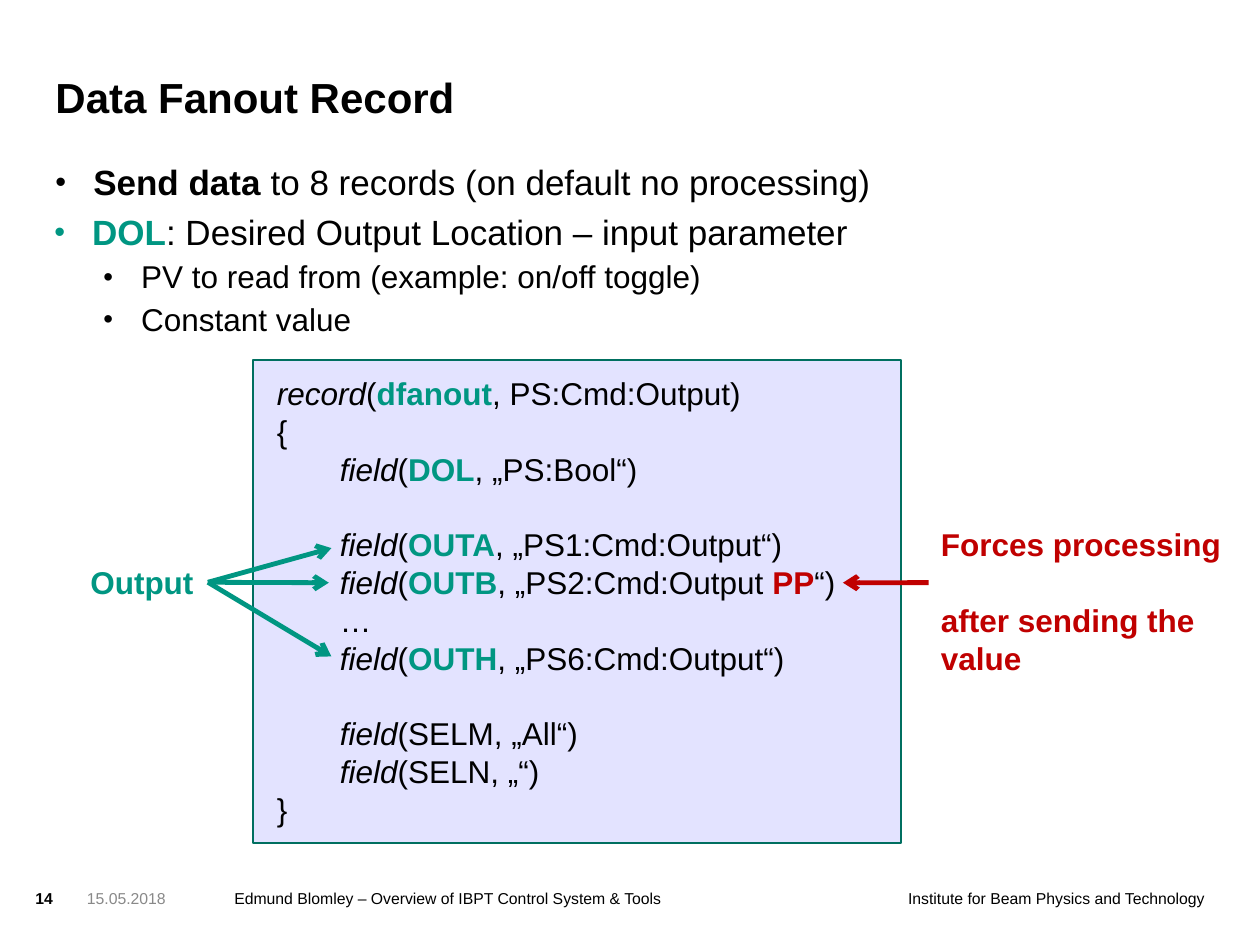
from lxml.etree import SubElement
from pptx import Presentation
from pptx.dml.color import RGBColor
from pptx.enum.shapes import MSO_CONNECTOR, MSO_SHAPE
from pptx.enum.text import MSO_ANCHOR, MSO_AUTO_SIZE, PP_ALIGN
from pptx.oxml.ns import qn
from pptx.util import Pt

BLACK, GREY, TEAL, RED = "000000", "898989", "009682", "C00000"
STYLES = {
    "plain": (BLACK, False, False),
    "bold": (BLACK, True, False),
    "italic": (BLACK, False, True),
    "key": (TEAL, True, False),
    "alert": (RED, True, False),
    "muted": (GREY, False, False),
}
LINE_HEIGHT = 21.6

TITLE = "Data Fanout Record"
SEND_BULLETS = [
    (0, [("Send data ", "bold"), ("to 8 records (on default no processing)", "plain")]),
]
DOL_BULLETS = [
    (0, [("DOL", "key"), (": Desired Output Location – input parameter", "plain")]),
    (1, [("PV to read from (example: on/off toggle)", "plain")]),
    (1, [("Constant value", "plain")]),
]
BULLET_LEVELS = [(21.6, 20), (49.7, 18)]


def field(name, style, *value):
    return [("field", "italic"), ("(", "plain"), (name, style), *value]


CODE = [
    (0, 0, [("record", "italic"), ("(", "plain"), ("dfanout", "key"),
            (", PS:Cmd:Output)", "plain")]),
    (0, 0, [("{", "plain")]),
    (1, 0, field("DOL", "key", (", „PS:Bool“)", "plain"))),
    (1, 1, field("OUTA", "key", (", „PS1:Cmd:Output“)", "plain"))),
    (1, 0, field("OUTB", "key", (", „PS2:Cmd:Output ", "plain"),
                 ("PP", "alert"), ("“)", "plain"))),
    (1, 0, [("…", "plain")]),
    (1, 0, field("OUTH", "key", (", „PS6:Cmd:Output“)", "plain"))),
    (1, 1, field("SELM", "plain", (", „All“)", "plain"))),
    (1, 0, field("SELN", "plain", (", „“)", "plain"))),
    (0, 0, [("}", "plain")]),
]
FORCES_NOTE = [
    (0, 0, [("Forces processing", "alert")]),
    (0, 1, [("after sending the value", "alert")]),
]
OUTPUT_LABEL = [(0, 0, [("Output", "key")])]
FOOTER = [
    ("14", "bold", 20.2, 26, PP_ALIGN.LEFT),
    ("15.05.2018", "muted", 49.7, 80.6, PP_ALIGN.LEFT),
    ("Edmund Blomley – Overview of IBPT Control System & Tools", "plain",
     133.9, 359.3, PP_ALIGN.LEFT),
    ("Institute for Beam Physics and Technology", "plain", 472.3, 216, PP_ALIGN.RIGHT),
]
OUTPUT_TARGETS = [(189.4, 313.2), (187.9, 333), (189.4, 375.1)]
PP_TARGET = (481.7, 333)


def rgb(value):
    return RGBColor.from_string(value)


def add_runs(paragraph, runs, size):
    for text, style in runs:
        run = paragraph.add_run()
        run.text = text
        color, run.font.bold, run.font.italic = STYLES[style]
        run.font.name = "Arial"
        run.font.size = Pt(size)
        run.font.color.rgb = rgb(color)


def clear_insets(frame):
    frame.margin_left = frame.margin_right = Pt(0)
    frame.margin_top = frame.margin_bottom = Pt(0)


def add_box(slide, left, top, width, height, insets=False, wrap=True):
    box = slide.shapes.add_textbox(Pt(left), Pt(top), Pt(width), Pt(height))
    box.text_frame.word_wrap = wrap
    if not insets:
        clear_insets(box.text_frame)
    return box


def paragraphs(frame, items):
    for index, item in enumerate(items):
        yield index, frame.add_paragraph() if index else frame.paragraphs[0], item


def write_bullets(frame, bullets):
    for index, paragraph, (level, runs) in paragraphs(frame, bullets):
        indent, size = BULLET_LEVELS[level]
        paragraph.level = level
        properties = paragraph._p.get_or_add_pPr()
        properties.set("marL", str(Pt(indent)))
        properties.set("indent", str(-Pt(21.6)))
        SubElement(properties, qn("a:buSzPct")).set("val", "88000")
        SubElement(properties, qn("a:buFont")).set("typeface", "Arial")
        SubElement(properties, qn("a:buChar")).set("char", "•")
        paragraph.line_spacing = 0.9
        if index:
            paragraph.space_before = Pt(4.8)
        add_runs(paragraph, runs, size)


def write_lines(frame, lines):
    for index, paragraph, (indent, gap, runs) in paragraphs(frame, lines):
        if indent:
            paragraph._p.get_or_add_pPr().set("marL", str(Pt(36 * indent)))
        if index:
            paragraph.space_before = Pt(LINE_HEIGHT * gap)
        add_runs(paragraph, runs, 18)


def add_arrow(slide, label, site, target, color):
    x, y = Pt(target[0]), Pt(target[1])
    arrow = slide.shapes.add_connector(MSO_CONNECTOR.STRAIGHT, x, y, x, y)
    arrow.begin_connect(label, site)
    arrow.line.color.rgb = rgb(color)
    arrow.line.width = Pt(2.75)
    SubElement(arrow.line._get_or_add_ln(), qn("a:tailEnd")).set("type", "arrow")
    SubElement(arrow._element.spPr, qn("a:effectLst"))


def main():
    deck = Presentation()
    deck.slide_width, deck.slide_height = Pt(720), Pt(540)
    slide = deck.slides.add_slide(deck.slide_layouts[5])

    title = slide.shapes.title
    title.left, title.top, title.width, title.height = Pt(31.7), Pt(31), Pt(540.7), Pt(38.9)
    title.text_frame.auto_size = MSO_AUTO_SIZE.NONE
    title.text_frame.vertical_anchor = MSO_ANCHOR.BOTTOM
    clear_insets(title.text_frame)
    heading = title.text_frame.paragraphs[0]
    heading.alignment = PP_ALIGN.LEFT
    heading.line_spacing = 0.9
    add_runs(heading, [(TITLE, "bold")], 24)

    write_bullets(add_box(slide, 31.7, 94.3, 656.6, 24).text_frame, SEND_BULLETS)
    write_bullets(add_box(slide, 31, 123.1, 656.6, 74.9).text_frame, DOL_BULLETS)

    panel = slide.shapes.add_shape(
        MSO_SHAPE.RECTANGLE, Pt(144.7), Pt(205.9), Pt(370.1), Pt(275.8))
    panel.shadow.inherit = False
    panel.fill.solid()
    panel.fill.fore_color.rgb = rgb("9999FF")
    fill_color = panel._element.spPr.find(qn("a:solidFill"))[0]
    SubElement(fill_color, qn("a:alpha")).set("val", "27000")
    panel.line.color.rgb = rgb("006F60")
    panel.line.width = Pt(1)

    code = add_box(slide, 151.2, 210.2, 364.3, 269.3, insets=True)
    write_lines(code.text_frame, CODE)

    forces = add_box(slide, 530.6, 296.6, 179.3, 72.7, insets=True)
    write_lines(forces.text_frame, FORCES_NOTE)
    add_arrow(slide, forces, 1, PP_TARGET, RED)

    output = add_box(slide, 44.6, 318.2, 74.2, 29.1, insets=True, wrap=False)
    write_lines(output.text_frame, OUTPUT_LABEL)
    for target in OUTPUT_TARGETS:
        add_arrow(slide, output, 3, target, TEAL)

    for text, style, left, width, alignment in FOOTER:
        line = add_box(slide, left, 507.6, width, 28.8).text_frame.paragraphs[0]
        line.alignment = alignment
        add_runs(line, [(text, style)], 9)

    deck.save("out.pptx")


if __name__ == "__main__":
    main()
